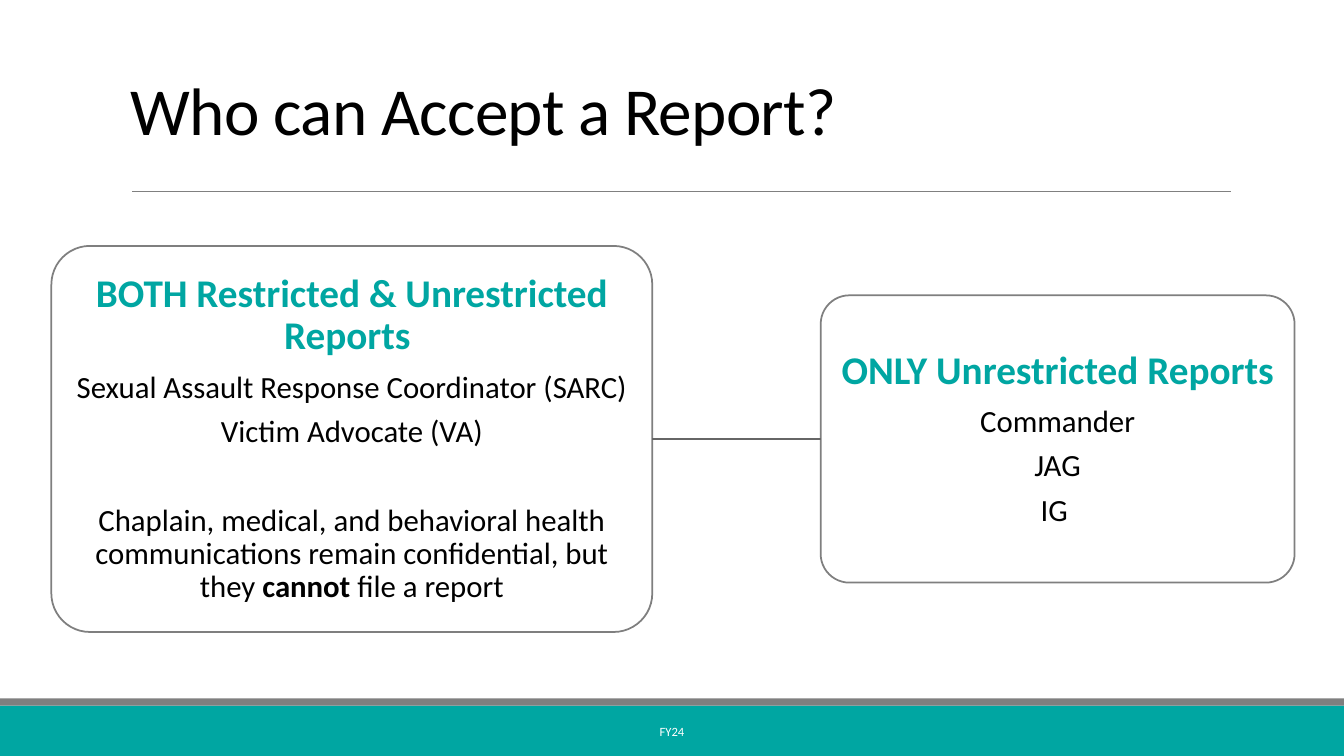
import pptx
import pptx.util
import pptx.dml.color
import pptx.enum.shapes
import pptx.enum.text
from pptx.util import Inches

COLORS = {"teal": "00A6A2", "gray": "7F7F7F", "rule": "808080",
          "link": "666666", "black": "000000", "white": "FFFFFF"}
SHAPE = pptx.enum.shapes.MSO_SHAPE
ANCHOR = pptx.enum.text.MSO_ANCHOR
CENTER = pptx.enum.text.PP_ALIGN.CENTER


def rgb(name):
    return pptx.dml.color.RGBColor.from_string(COLORS[name])


def style(p, size, color, bold=False):
    p.font.name = "Calibri"
    p.font.size = pptx.util.Pt(size)
    p.font.color.rgb = rgb(color)
    p.font.bold = bold


prs = pptx.Presentation()
prs.slide_width, prs.slide_height = Inches(13.33), Inches(7.5)
s = prs.slides.add_slide(prs.slide_layouts[6])

# Footer bands
for top, height, color in [(7, 0.5, "teal"), (6.93, 0.07, "gray")]:
    band = s.shapes.add_shape(SHAPE.RECTANGLE, 0, Inches(top), prs.slide_width, Inches(height))
    band.shadow.inherit = False
    band.fill.solid()
    band.fill.fore_color.rgb = rgb(color)
    band.line.fill.background()

# Title and footer text
texts = [("Who can Accept a Report?", (1.2, 0.31, 11, 1.22), 48, "black", ANCHOR.BOTTOM),
         ("FY24", (4.03, 7.06, 5.27, 0.4), 9, "white", ANCHOR.MIDDLE)]
for text, box, size, color, anchor in texts:
    tf = s.shapes.add_textbox(*map(Inches, box)).text_frame
    tf.word_wrap = True
    tf.vertical_anchor = anchor
    p = tf.paragraphs[0]
    r = p.add_run()
    r.text = text
    style(p, size, color)
    if size == 48:
        p.line_spacing = 0.85
        r._r.get_or_add_rPr().set("spc", "-50")
    else:
        p.alignment = CENTER

# Report cards: box, heading, then (runs, space after in points) per line
cards = [
    ((0.51, 2.44, 5.96, 3.83), "BOTH Restricted & Unrestricted Reports ", [
        (["Sexual Assault Response Coordinator (SARC)"], 7.7),
        (["Victim Advocate (VA)"], 39.6),
        (["Chaplain, medical, and behavioral health communications remain confidential, but they ",
          "cannot", " file a report"], 7.7)]),
    ((8.14, 2.93, 4.7, 2.85), "ONLY Unrestricted Reports", [
        (["Commander"], 7.7), (["JAG"], 7.7), (["IG "], 7.7)]),
]
boxes = []
for box, heading, lines in cards:
    sp = s.shapes.add_shape(SHAPE.ROUNDED_RECTANGLE, *map(Inches, box))
    sp.adjustments[0] = 0.1
    sp.shadow.inherit = False
    sp.fill.background()
    sp.line.color.rgb = rgb("gray")
    sp.line.width = pptx.util.Pt(1.25)
    boxes.append(sp)

    tf = sp.text_frame
    tf.word_wrap = True
    tf.vertical_anchor = ANCHOR.MIDDLE
    tf.margin_left = tf.margin_right = tf.margin_top = tf.margin_bottom = Inches(0.02)
    for i, (runs, after) in enumerate([([heading], 9.8)] + lines):
        p = tf.paragraphs[0] if i == 0 else tf.add_paragraph()
        p.alignment = CENTER
        p.line_spacing = 0.9
        p.space_after = pptx.util.Pt(after)
        if i == 0:
            style(p, 28, "teal", True)
        else:
            style(p, 22, "black")
        for text in runs:
            r = p.add_run()
            r.text = text
            if text == "cannot":
                r.font.bold = True

# Title rule and the link between the cards
rules = [((1.31, 1.9, 12.21, 1.9), "rule", 0.5), ((6.47, 4.36, 8.14, 4.36), "link", 1.25)]
for ends, color, width in rules:
    line = s.shapes.add_connector(pptx.enum.shapes.MSO_CONNECTOR.STRAIGHT, *map(Inches, ends))
    line.line.color.rgb = rgb(color)
    line.line.width = pptx.util.Pt(width)
    line._element.spPr.append(pptx.oxml.parse_xml(
        '<a:effectLst xmlns:a="http://schemas.openxmlformats.org/drawingml/2006/main"/>'))
    if color == "link":
        line.begin_connect(boxes[0], 3)
        line.end_connect(boxes[1], 1)

prs.save("out.pptx")
